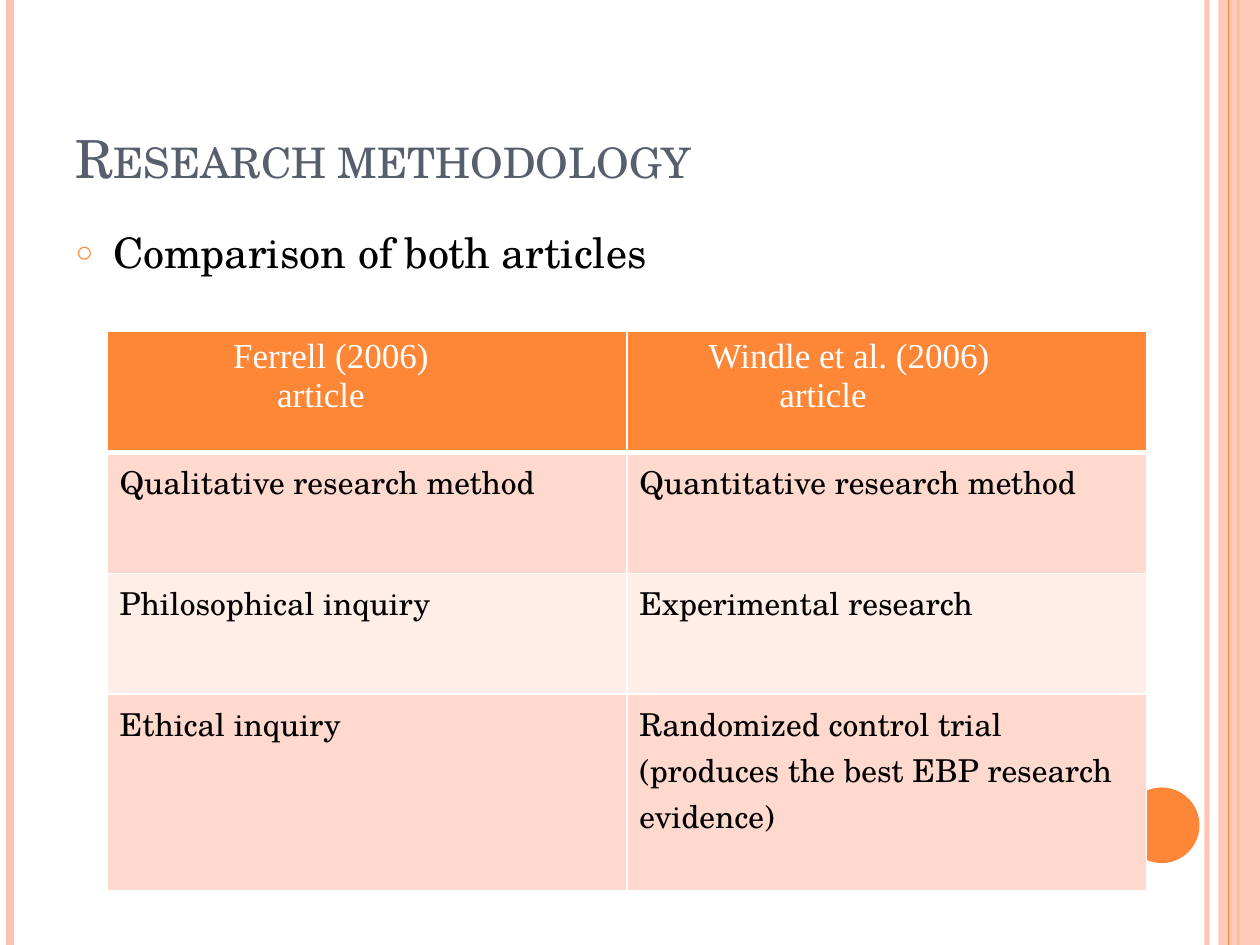
"""Build the research methodology comparison slide."""
from lxml.etree import SubElement
from pptx import Presentation
from pptx.dml.color import RGBColor as RGB
from pptx.enum.shapes import MSO_CONNECTOR as Connector, MSO_SHAPE as Shape
from pptx.enum.text import MSO_ANCHOR as Anchor, PP_ALIGN as Align
from pptx.oxml.ns import qn
from pptx.util import Inches, Pt

COLORS = {
    "orange": "FE8637", "peach": "FEC3AE", "slate": "575F6D",
    "white": "FFFFFF", "black": "000000",
    "dark_band": "FFD9CE", "light_band": "FFEDE8",
}
SERIF, ROMAN = "TeX Gyre Schola", "Times New Roman"
HEADINGS = [
    [("Ferrell (2006)", 0.9), ("article", 1.25)],
    [("Windle et al. (2006)", 0.55), ("article", 1.11)],
]
FINDINGS = [
    [["Qualitative research method"], ["Quantitative research method"]],
    [["Philosophical inquiry"], ["Experimental research"]],
    [["Ethical inquiry"],
     ["Randomized control trial", "(produces the best EBP research evidence)"]],
]
ROW_HEIGHTS = [0.96, 0.96, 0.96, 1.56]


class SlideBuilder:
    def __init__(self, slide):
        self.slide = slide

    def paint(self, fill, color, opacity=100):
        fill.solid()
        fill.fore_color.rgb = RGB.from_string(COLORS[color])
        if opacity < 100:
            tint = fill._xPr.find(qn("a:solidFill"))[0]
            SubElement(tint, qn("a:alpha"), val=str(opacity * 1000))

    def add_run(self, paragraph, text, size, color, font=SERIF):
        run = paragraph.add_run()
        run.text = text
        run.font.size, run.font.name = Pt(size), font
        run.font.color.rgb = RGB.from_string(COLORS[color])
        return run

    def vertical_rule(self, x, color, width, opacity=100):
        rule = self.slide.shapes.add_connector(
            Connector.STRAIGHT, Inches(x), 0, Inches(x), Inches(7.5))
        rule.line.width = Pt(width)
        self.paint(rule.line.fill, color, opacity)
        SubElement(rule._element.spPr, qn("a:effectLst"))

    def block(self, kind, box, color, opacity=100):
        shape = self.slide.shapes.add_shape(kind, *map(Inches, box))
        shape.shadow.inherit = False
        shape.line.fill.background()
        self.paint(shape.fill, color, opacity)

    def place(self, holder, box):
        holder.left, holder.top, holder.width, holder.height = map(Inches, box)
        return holder.text_frame

    def title(self, text, box):
        frame = self.place(self.slide.shapes.title, box)
        frame.vertical_anchor = Anchor.BOTTOM
        heading = frame.paragraphs[0]
        heading.alignment = Align.LEFT
        run = self.add_run(heading, text, 30, "slate")
        run.font._element.set("cap", "small")

    def bullet(self, text, box):
        frame = self.place(self.slide.placeholders[1], box)
        point = frame.paragraphs[0]
        point.space_before = Pt(6)
        props = point._p.get_or_add_pPr()
        props.set("marL", str(Inches(0.3)))
        props.set("indent", str(-Inches(0.3)))
        tint = SubElement(props, qn("a:buClr"))
        SubElement(tint, qn("a:srgbClr"), val=COLORS["orange"])
        SubElement(props, qn("a:buSzPct"), val="70000")
        SubElement(props, qn("a:buChar"), char="○")
        self.add_run(point, text, 24, "black")

    def borders(self, cell, **widths):
        props = cell._tc.get_or_add_tcPr()
        for side in ("L", "R", "T", "B"):
            edge = SubElement(props, qn(f"a:ln{side}"), w=str(Pt(widths.get(side, 1))))
            solid = SubElement(edge, qn("a:solidFill"))
            SubElement(solid, qn("a:srgbClr"), val=COLORS["white"])

    def cell(self, cell, lines, fill, size, color, font, **widths):
        self.borders(cell, **widths)
        self.paint(cell.fill, fill)
        for index, (text, indent) in enumerate(lines):
            frame = cell.text_frame
            paragraph = frame.add_paragraph() if index else frame.paragraphs[0]
            if indent:
                paragraph._p.get_or_add_pPr().set("marL", str(Inches(indent)))
            self.add_run(paragraph, text, size, color, font)

    def table(self, headings, findings, heights, left, top, width):
        table = self.slide.shapes.add_table(
            len(heights), len(headings), Inches(left), Inches(top),
            Inches(width), Inches(sum(heights))).table
        for row, height in zip(table.rows, heights):
            row.height = Inches(height)
        for col, lines in enumerate(headings):
            self.cell(table.cell(0, col), lines, "orange", 20, "white", ROMAN, B=3)
        for row, entries in enumerate(findings, start=1):
            band = "dark_band" if row % 2 else "light_band"
            top_edge = 3 if row == 1 else 1
            for col, texts in enumerate(entries):
                lines = [(text, 0) for text in texts]
                self.cell(table.cell(row, col), lines, band, 18, "black", SERIF, T=top_edge)


def main():
    deck = Presentation()
    deck.slide_width, deck.slide_height = Inches(10), Inches(7.5)
    builder = SlideBuilder(deck.slides.add_slide(deck.slide_layouts[1]))
    builder.vertical_rule(9.58, "peach", 3, 93)
    builder.vertical_rule(0.08, "peach", 4.5)
    builder.vertical_rule(9.83, "orange", 1.5)
    builder.block(Shape.RECTANGLE, (9.67, 0, 0.33, 7.5), "peach", 87)
    builder.vertical_rule(9.75, "orange", 0.75)
    builder.block(Shape.OVAL, (8.92, 6.25, 0.6, 0.6), "orange")
    builder.title("Research methodology", (0.5, 0.3, 8.17, 1.25))
    builder.bullet("Comparison of both articles", (0.5, 1.75, 8.17, 5.33))
    builder.table(HEADINGS, FINDINGS, ROW_HEIGHTS, 0.85, 2.63, 8.25)
    deck.save("out.pptx")


if __name__ == "__main__":
    main()
